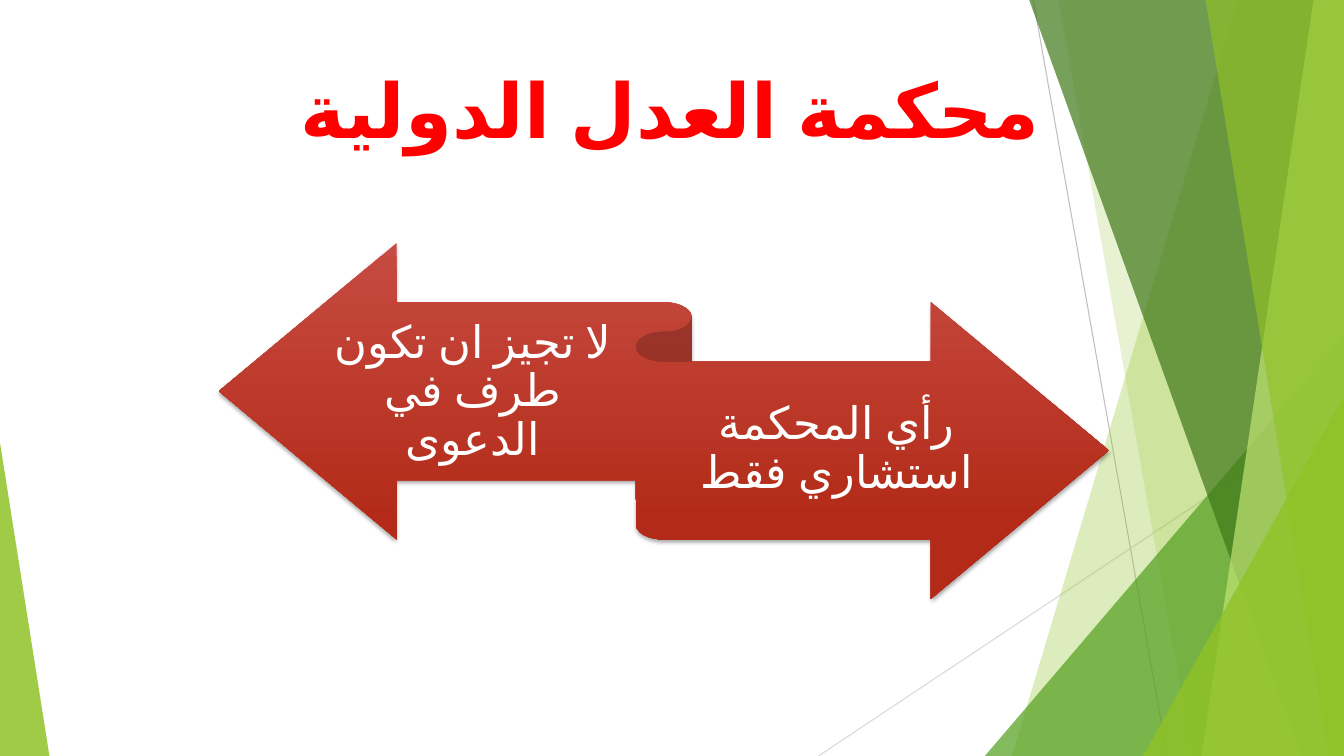
import pptx
import pptx.util
import pptx.oxml
from pptx.dml.color import RGBColor
from pptx.enum.lang import MSO_LANGUAGE_ID
from pptx.enum.shapes import MSO_CONNECTOR, MSO_SHAPE
from pptx.enum.text import MSO_ANCHOR, MSO_AUTO_SIZE, PP_ALIGN
from pptx.oxml.ns import nsdecls, qn
from lxml import etree

FONT = "Cabin"
WHITE = RGBColor(0xFF, 0xFF, 0xFF)
RED = RGBColor(0xFF, 0x00, 0x00)
LIME = RGBColor(0x90, 0xC2, 0x26)
PALE_LIME = RGBColor(0xC0, 0xE4, 0x74)
GREEN = RGBColor(0x54, 0xA0, 0x21)
DARK_GREEN = RGBColor(0x3F, 0x78, 0x19)
GREY = RGBColor(0xBF, 0xBF, 0xBF)
LIGHT_GREY = RGBColor(0xD9, 0xD9, 0xD9)
RIBBON_TOP = RGBColor(0xC7, 0x4B, 0x42)
RIBBON_BOTTOM = RGBColor(0xB3, 0x2B, 0x18)

presentation = pptx.Presentation()
presentation.slide_width = pptx.util.Inches(13.33)
presentation.slide_height = pptx.util.Inches(7.5)
slide = presentation.slides.add_slide(presentation.slide_layouts[6])


def scaled(*shares):
    """Turn alternating x, y percentages of the slide into lengths."""
    sides = (presentation.slide_width, presentation.slide_height)
    return [round(sides[i % 2] * share / 100) for i, share in enumerate(shares)]


def add_text(text, box, color, font_values, paragraph_values, frame_values):
    frame = slide.shapes.add_textbox(*scaled(*box)).text_frame
    paragraph = frame.paragraphs[0]
    run = paragraph.add_run()
    run.text = text
    for target, values in ((frame, frame_values), (paragraph, paragraph_values),
                           (run.font, font_values)):
        for name, value in values.items():
            setattr(target, name, value)
    run.font.name = FONT
    run.font.language_id = MSO_LANGUAGE_ID.ARABIC
    run.font.color.rgb = color
    return paragraph


# Thin background lines
for ends, color in (
    ((76.88, 0, 86.85, 100), GREY),
    ((100, 53.73, 60.9, 100), LIGHT_GREY),
):
    line = slide.shapes.add_connector(MSO_CONNECTOR.STRAIGHT, *scaled(*ends))
    line.line.color.rgb = color
    line.line.width = pptx.util.Pt(0.75)
    etree.SubElement(line._element.spPr, qn("a:effectLst"))

# Facets from back to front. A slanted band gives its left edge at the top and
# bottom of the slide; a triangle gives its left, top, width and its apex.
facets = [
    ("band", (92.1, 75.3), LIME, 30),
    ("band", (78.75, 88.73), LIME, 20),
    ("triangle", (73.28, 44.4, 26.72, 1), GREEN, 72),
    ("band", (76.58, 96.83), DARK_GREEN, 70),
    ("band", (97.73, 89.4), PALE_LIME, 70),
    ("band", (89.7, 98.85), LIME, 65),
    ("triangle", (85.05, 52.4, 14.95, 1), LIME, 80),
    ("triangle", (0, 58.53, 3.68, 0), LIME, 85),
]
for kind, geometry, color, opacity in facets:
    if kind == "band":
        top_x, bottom_x = geometry
        builder = slide.shapes.build_freeform(*scaled(top_x, 0))
        corners = ((100, 0), (100, 100), (bottom_x, 100))
        builder.add_line_segments([scaled(*corner) for corner in corners])
        facet = builder.convert_to_shape()
    else:
        left, top, width, apex = geometry
        facet = slide.shapes.add_shape(
            MSO_SHAPE.ISOSCELES_TRIANGLE, *scaled(left, top, width, 100 - top))
        facet.adjustments[0] = apex
    facet.shadow.inherit = False
    facet.line.fill.background()
    facet.fill.solid()
    facet.fill.fore_color.rgb = color
    color_element = facet._element.spPr.find(qn("a:solidFill"))[0]
    etree.SubElement(color_element, qn("a:alpha")).set("val", str(opacity * 1000))

# Two-way ribbon
ribbon = slide.shapes.add_shape(
    MSO_SHAPE.LEFT_RIGHT_RIBBON, *scaled(16.28, 32.13, 66.23, 47.07))
ribbon.line.fill.background()
ribbon.fill.gradient()
ribbon.fill.gradient_angle = 270
stops = ((0, RIBBON_TOP), (0.78, RIBBON_BOTTOM))
for stop, (position, color) in zip(ribbon.fill.gradient_stops, stops):
    stop.position = position
    stop.color.rgb = color
ribbon.shadow.inherit = False
ribbon._element.spPr.find(qn("a:effectLst")).append(pptx.oxml.parse_xml(
    f'<a:outerShdw {nsdecls("a")} blurRad="38100" dist="25400" dir="5400000" '
    'rotWithShape="0"><a:srgbClr val="000000"><a:alpha val="35000"/></a:srgbClr>'
    '</a:outerShdw>'))

# Arrow labels
label_frame = {
    "word_wrap": True,
    "vertical_anchor": MSO_ANCHOR.MIDDLE,
    "margin_left": 0,
    "margin_right": 0,
    "margin_top": pptx.util.Inches(0.12),
    "margin_bottom": pptx.util.Inches(0.13),
}
for text, box in (
    ("لا تجيز ان تكون طرف في الدعوى", (24.23, 40.4, 21.9, 23.07)),
    ("رأي المحكمة استشاري فقط", (49.35, 48, 25.8, 23.07)),
):
    paragraph = add_text(text, box, WHITE, {"size": pptx.util.Pt(32)},
                         {"alignment": PP_ALIGN.CENTER, "line_spacing": 0.9},
                         label_frame)
    paragraph._p.get_or_add_pPr().set("rtl", "1")

# Title
add_text("محكمة العدل الدولية", (21.08, 7.73, 57.6, 13.47), RED,
         {"size": pptx.util.Pt(54), "bold": True},
         {"alignment": PP_ALIGN.CENTER},
         {"word_wrap": False, "auto_size": MSO_AUTO_SIZE.SHAPE_TO_FIT_TEXT})

presentation.save("out.pptx")
